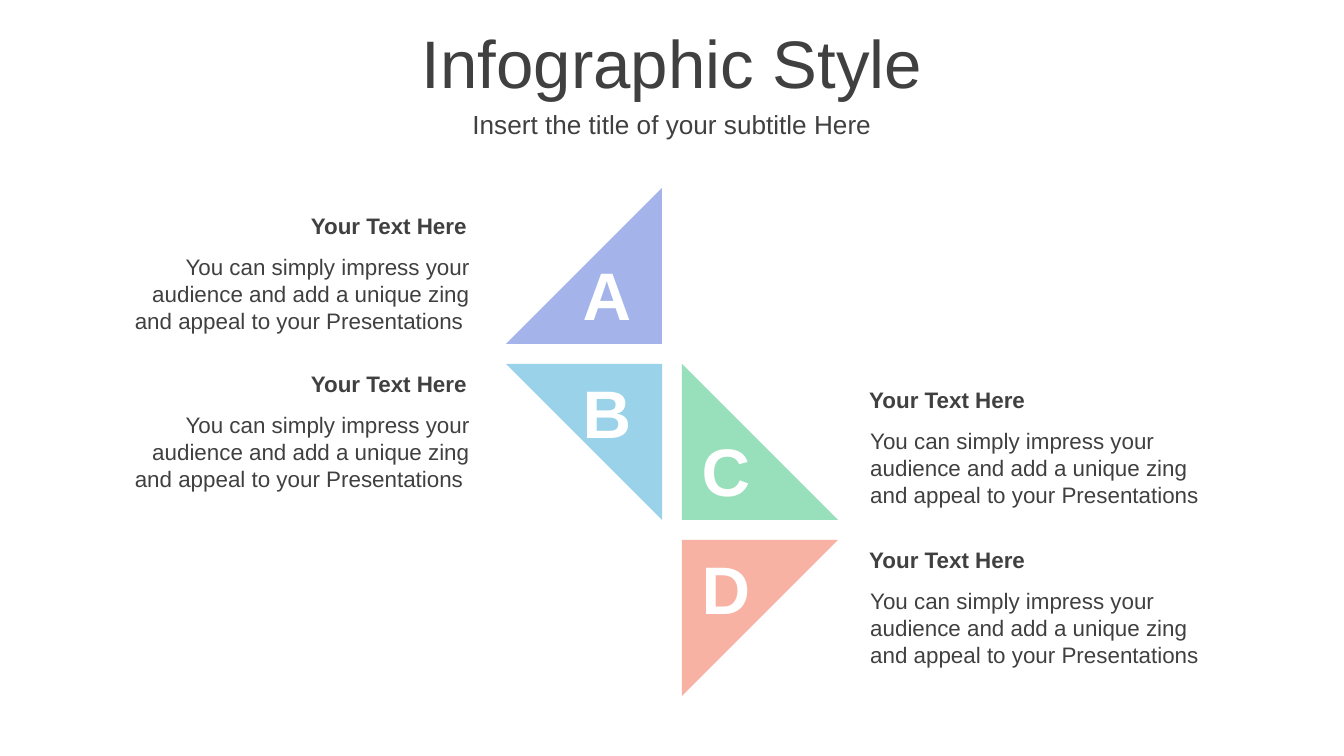
from pptx import Presentation, util as u
from pptx.dml.color import RGBColor
from pptx.enum import shapes, text

PX = 914400 / 134.4
COLORS = {"ink": "404040", "white": "FFFFFF", "A": "A4B4EA", "B": "9AD3E9", "C": "98DFBB", "D": "F8B2A3"}
SIDE, PITCH, GRID_LEFT, GRID_TOP = 156, 176, 506, 188
HEADING = "Your Text Here"
BODY = "You can simply impress your audience and add a unique zing and appeal to your Presentations"
# letter, column, row, rotation, heading top
ITEMS = [
    ("A", 0, 0, 270, 206),
    ("B", 0, 1, 180, 364),
    ("C", 1, 1, 0, 380),
    ("D", 1, 2, 90, 540),
]


def px(*lengths):
    """Turn whole pixels into EMU."""
    return [u.Emu(round(length * PX)) for length in lengths]


def rgb(name):
    """Look up a named colour."""
    return RGBColor.from_string(COLORS[name])


def write(box, words, size, align, color="ink", bold=False):
    """Put one formatted paragraph in a box."""
    frame = box.text_frame
    frame.word_wrap = True
    frame.text = words
    para = frame.paragraphs[0]
    para.alignment = align
    font = para.font
    font.name, font.size, font.bold = "Arial", u.Pt(size), bold
    font.color.rgb = rgb(color)
    return para


def fill_placeholder(box, words, size, top, height):
    """Move a placeholder to a full-width band and write in it."""
    box.left, box.top, box.width, box.height = px(0, top, 1344, height)
    box.text_frame.auto_size = text.MSO_AUTO_SIZE.NONE
    box.text_frame.vertical_anchor = text.MSO_ANCHOR.MIDDLE
    para = write(box, words, size, text.PP_ALIGN.CENTER)
    para.space_before = u.Pt(round(size * 0.2))


def add_text(page, place, *style, **options):
    """Add a text box at a place given in pixels."""
    write(page.shapes.add_textbox(*px(*place)), *style, **options)


def add_triangle(page, letter, column, row, rotation):
    """Add a coloured right triangle with its letter."""
    left, top = GRID_LEFT + column * PITCH, GRID_TOP + row * PITCH
    triangle = page.shapes.add_shape(shapes.MSO_SHAPE.RIGHT_TRIANGLE, *px(left, top, SIDE, SIDE))
    triangle.rotation = rotation
    triangle.shadow.inherit = False
    triangle.fill.solid()
    triangle.fill.fore_color.rgb = rgb(letter)
    triangle.line.fill.background()
    letter_left = left + (3 if column else 60)
    letter_top = top + (59 if letter in "AC" else 1)
    add_text(page, (letter_left, letter_top, 82, 95), letter, 36, text.PP_ALIGN.CENTER, color="white", bold=True)


def add_caption(page, column, top):
    """Add a heading and its body text beside a triangle."""
    if column:
        align, words = text.PP_ALIGN.LEFT, BODY
        heading_place, body_place = (856, top, 371, 40), (857, top + 41, 375, 95)
    else:
        align, words = text.PP_ALIGN.RIGHT, BODY + " "
        heading_place, body_place = (112, top, 368, 40), (112, top + 41, 371, 95)
    add_text(page, heading_place, HEADING, 12, align, bold=True)
    add_text(page, body_place, words, 12, align)


def main():
    """Build the slide and save it."""
    deck = Presentation()
    deck.slide_width, deck.slide_height = px(1344, 756)
    page = deck.slides.add_slide(deck.slide_layouts[0])
    title, subtitle = page.placeholders
    fill_placeholder(title, "Infographic Style", 36, 19, 85)
    fill_placeholder(subtitle, "Insert the title of your subtitle Here", 14, 103, 42)
    for letter, column, row, rotation, heading_top in ITEMS:
        add_triangle(page, letter, column, row, rotation)
        add_caption(page, column, heading_top)
    deck.save("out.pptx")


if __name__ == "__main__":
    main()
